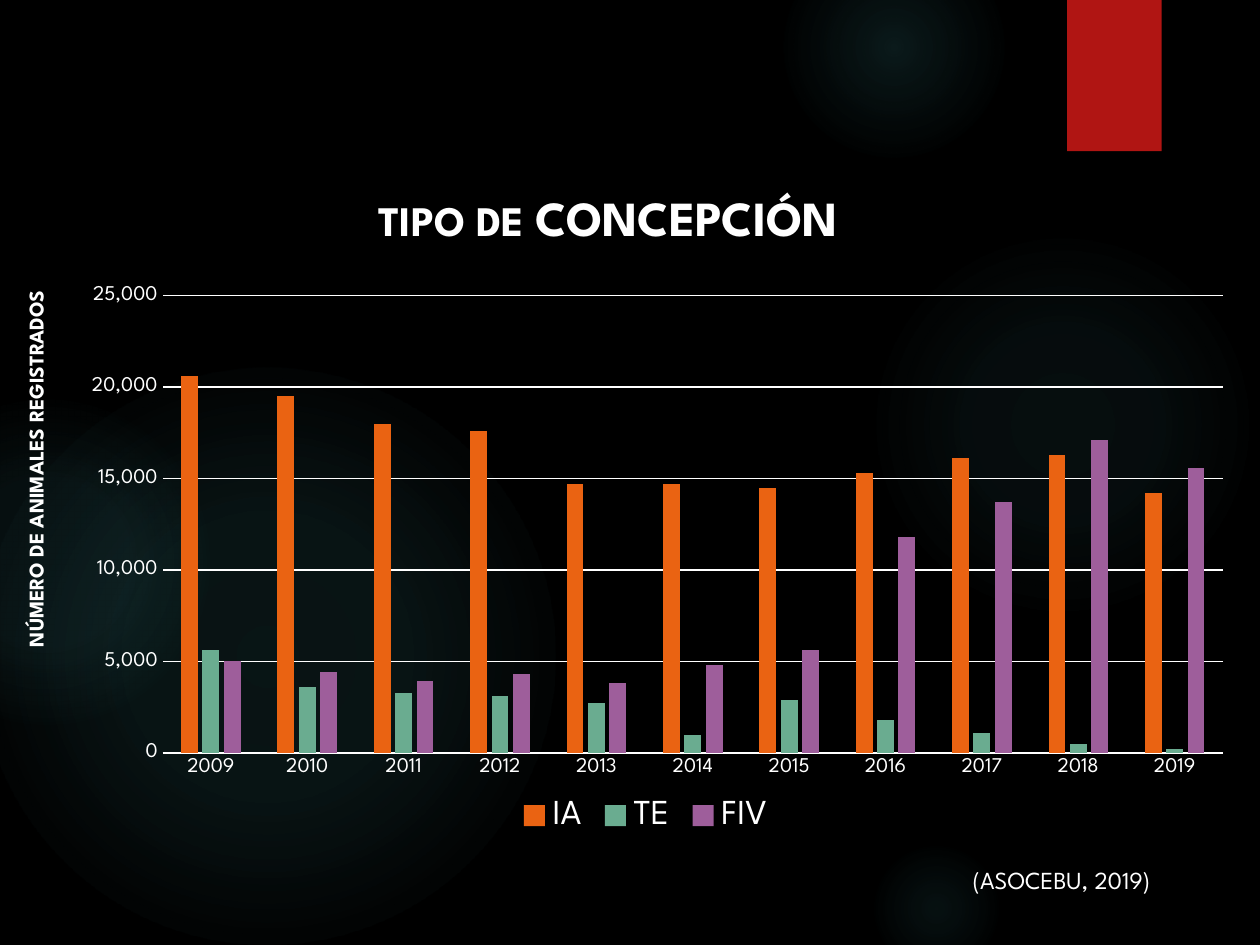
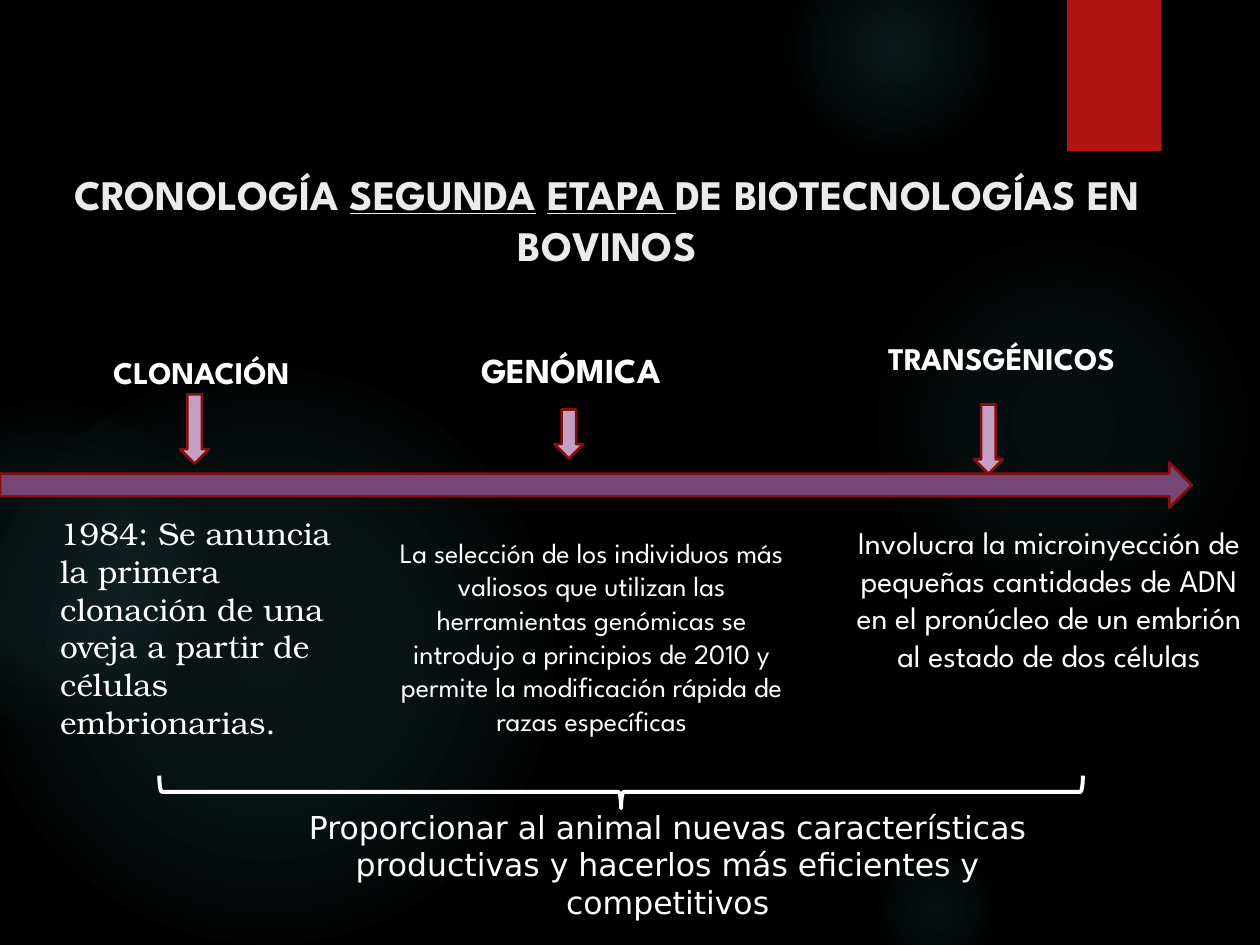
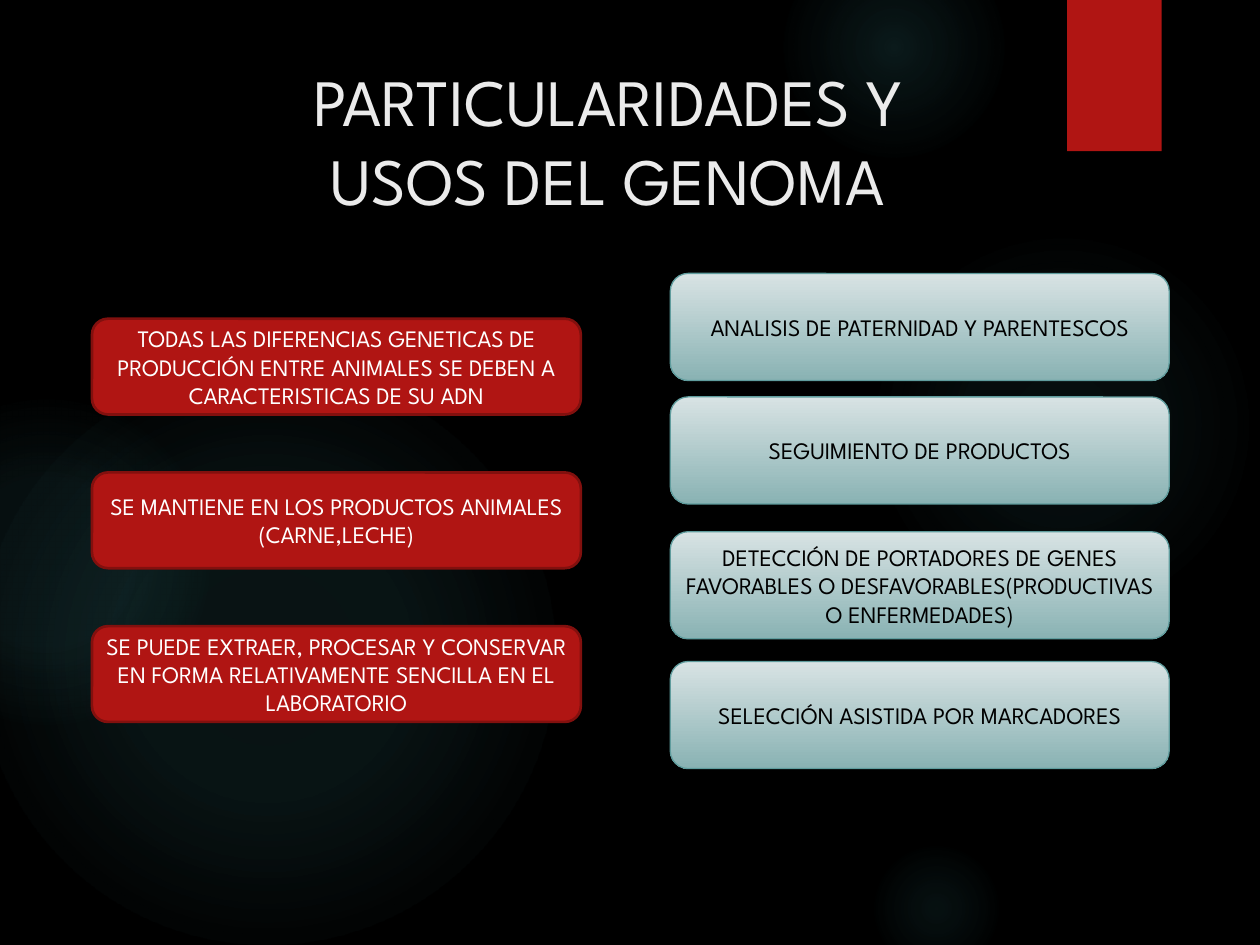
from dataclasses import dataclass

from pptx import Presentation
from pptx.chart.data import CategoryChartData as Data
from pptx.dml.color import RGBColor
from pptx.enum.chart import XL_CHART_TYPE as Kind, XL_LEGEND_POSITION as Spot, XL_TICK_MARK as Tick
from pptx.enum.shapes import MSO_SHAPE as Form
from pptx.enum.text import MSO_ANCHOR as Anchor, PP_ALIGN as Align
from pptx.oxml import parse_xml
from pptx.oxml.ns import nsdecls, qn
from pptx.util import Inches, Pt


@dataclass(frozen=True)
class Theme:
    """Colours, fonts and type sizes of the deck."""
    black: str = "000000"
    white: str = "FFFFFF"
    pale: str = "EBEBEB"
    glow: str = "50B9C1"
    red: str = "B01513"
    dark: str = "82100E"
    plum: str = "764674"
    lilac: str = "C59EC3"
    mist: str = "D8E3E4"
    teal: str = "89B2B3"
    edge: str = "5F9C9D"
    bars: tuple = ("EA6312", "6AAC90", "9E5E9B")
    font: str = "League Spartan"
    serif: str = "TeX Gyre Bonum"
    sans: str = "DejaVu Sans"
    least: float = 10
    tiny: float = 12
    card: float = 13.5
    small: float = 14
    note: float = 16
    body: float = 18
    big: float = 20
    head: float = 24
    main: float = 28
    huge: float = 37.8


T = Theme()
HALOS = (
    ((6.89, 1.83, 3.08), ((0, 7), (36, 6), (69, 0))),
    ((6.22, -0.5, 1.75), ((0, 14), (36, 7), (73, 0))),
    ((6.89, 6.67, 1.08), ((0, 9), (36, 5), (66, 0))),
    ((-0.17, 2.92, 4.58), ((0, 11), (36, 10), (75, 0))),
    ((-0.92, 3.17, 2.58), ((0, 8), (36, 8), (72, 0))),
)


def tint(code):
    """Turn a hex code into a colour."""
    return RGBColor.from_string(code)


def style(font, size=T.body, color=T.white, face=T.font, bold=False, under=False):
    """Format a font."""
    font.size, font.name, font.bold, font.underline = Pt(size), face, bold, under
    font.color.rgb = tint(color)


def write(frame, text, align=Align.LEFT, **look):
    """Fill a frame with a string or with (string, format) runs."""
    para = frame.paragraphs[0]
    para.alignment = align
    parts = [(text, {})] if isinstance(text, str) else text
    for words, extra in parts:
        run = para.add_run()
        run.text = words
        style(run.font, **{**look, **extra})


def label(slide, box, text, **look):
    """Add a wrapped text box and return its frame."""
    frame = slide.shapes.add_textbox(*map(Inches, box)).text_frame
    frame.word_wrap = True
    write(frame, text, **look)
    return frame


def shape(slide, form, box, fill=None, line=None, width=1.5):
    """Add a flat preset shape."""
    item = slide.shapes.add_shape(form, *map(Inches, box))
    item.shadow.inherit = False
    if fill:
        item.fill.solid()
        item.fill.fore_color.rgb = tint(fill)
    else:
        item.fill.background()
    if line:
        item.line.color.rgb = tint(line)
        item.line.width = Pt(width)
    else:
        item.line.fill.background()
    return item


def halo(slide, box, stops):
    """Add a round glow that fades outward."""
    left, top, size = box
    item = shape(slide, Form.OVAL, (left, top, size, size))
    marks = "".join(
        f'<a:gs pos="{pos * 1000}"><a:srgbClr val="{T.glow}">'
        f'<a:alpha val="{alpha * 1000}"/></a:srgbClr></a:gs>' for pos, alpha in stops)
    props = item._element.spPr
    props.replace(props.find(qn("a:noFill")), parse_xml(
        f'<a:gradFill {nsdecls("a")} rotWithShape="1"><a:gsLst>{marks}</a:gsLst>'
        '<a:path path="circle"><a:fillToRect l="50000" t="50000" r="50000" b="50000"/>'
        '</a:path></a:gradFill>'))


def start(deck):
    """Add a slide with the glows and the red tab."""
    slide = deck.slides.add_slide(deck.slide_layouts[6])
    for box, stops in HALOS:
        halo(slide, box, stops)
    shape(slide, Form.RECTANGLE, (8.47, 0, 0.75, 1.2), T.red)
    return slide


def layout(node, index, **spots):
    """Give a chart part a manual layout."""
    for old in node.findall(qn("c:layout")):
        node.remove(old)
    inner = '<c:layoutTarget val="inner"/>' if "w" in spots else ""
    modes = "".join(f'<c:{key}Mode val="edge"/>' for key in "xy")
    sizes = "".join(f'<c:{key} val="{val}"/>' for key, val in spots.items())
    node.insert(index, parse_xml(
        f'<c:layout {nsdecls("c")}><c:manualLayout>{inner}{modes}{sizes}'
        '</c:manualLayout></c:layout>'))


def axes(chart):
    """Format both axes and the grid."""
    for axis in (chart.category_axis, chart.value_axis):
        axis.major_tick_mark = axis.minor_tick_mark = Tick.NONE
        style(axis.tick_labels.font, size=T.tiny)
    base, scale = chart.category_axis, chart.value_axis
    scale.minimum_scale, scale.maximum_scale, scale.major_unit = 0, 25000, 5000
    scale.tick_labels.number_format = "#,##0"
    scale.tick_labels.number_format_is_linked = False
    scale.format.line.fill.background()
    for line in (base.format.line, scale.major_gridlines.format.line):
        line.color.rgb = tint(T.white)
        line.width = Pt(0.75)


def graph(slide, box, years, rows):
    """Add the column chart of animals by type of conception."""
    data = Data(number_format="#,##0")
    data.categories = years
    for name, vals in rows.items():
        data.add_series(name, vals)
    chart = slide.shapes.add_chart(Kind.COLUMN_CLUSTERED, *map(Inches, box), data).chart
    style(chart.font, size=T.least)
    write(chart.chart_title.text_frame,
          [("TIPO DE ", {"size": T.head}), ("CONCEPCIÓN", {})],
          align=Align.CENTER, size=T.main, bold=True)
    layout(chart.chart_title._element, 1, x=0.27, y=0.03)
    layout(chart._chartSpace.chart.plotArea, 0, x=0.09, y=0.18, w=0.9, h=0.69)
    axes(chart)
    plot = chart.plots[0]
    plot.gap_width, plot.overlap, plot.vary_by_categories = 219, -27, False
    for series, code in zip(plot.series, T.bars):
        series.format.fill.solid()
        series.format.fill.fore_color.rgb = tint(code)
    chart.has_legend = True
    chart.legend.position = Spot.BOTTOM
    chart.legend.include_in_layout = False
    style(chart.legend.font, size=T.big)


def births(deck):
    """Build the chart slide."""
    slide = start(deck)
    graph(slide, (0.45, 1.4, 9.35, 5.26), [str(year) for year in range(2009, 2020)], {
        "IA": (20600, 19500, 18000, 17600, 14700, 14700, 14500, 15300, 16100, 16300, 14200),
        "TE": (5600, 3600, 3300, 3100, 2700, 1000, 2900, 1800, 1100, 500, 200),
        "FIV": (5000, 4400, 3900, 4300, 3800, 4800, 5600, 11800, 13700, 17100, 15600),
    })
    label(slide, (7.22, 6.82, 2.01, 0.34), "(ASOCEBU, 2019)", align=Align.RIGHT, size=T.small)
    side = label(slide, (0.13, 1.96, 0.4, 3.52), "NÚMERO DE ANIMALES REGISTRADOS",
                 align=Align.CENTER, size=T.tiny, bold=True)
    side._txBody.bodyPr.set("vert", "vert270")


def stage(slide, name, spot, arrow, text, box, top_size=T.body, **look):
    """Add one stage: its name, its arrow and its account."""
    left, top, high = arrow
    label(slide, (*spot, 2.5, 0.4), name, size=top_size, bold=True)
    shape(slide, Form.DOWN_ARROW, (left, top, 0.23, high), T.lilac, T.dark)
    label(slide, box, text, **look)


def history(deck):
    """Build the timeline slide."""
    slide = start(deck)
    shape(slide, Form.RIGHT_ARROW, (0, 3.67, 9.46, 0.36), T.plum, T.dark)
    label(slide, (0.25, 1.29, 9.14, 1.53), [
        ("CRONOLOGÍA ", {}), ("SEGUNDA", {"under": True}), (" ", {}),
        ("ETAPA ", {"under": True}), ("DE BIOTECNOLOGÍAS EN BOVINOS", {}),
    ], align=Align.CENTER, size=T.head, color=T.pale, bold=True)
    stage(slide, "CLONACIÓN", (0.8, 2.75), (1.43, 3.13, 0.55),
          "1984: Se anuncia la primera clonación de una oveja a partir de células embrionarias.",
          (0.38, 4.03, 2.56, 1.31), face=T.serif)
    stage(slide, "GENÓMICA", (3.72, 2.72), (4.4, 3.25, 0.39),
          "La selección de los individuos más valiosos que utilizan las herramientas genómicas "
          "se introdujo a principios de 2010 y permite la modificación rápida de razas específicas",
          (3.05, 4.2, 3.29, 1.99), top_size=T.big, align=Align.CENTER, size=T.note)
    stage(slide, "TRANSGÉNICOS", (6.95, 2.64), (7.73, 3.21, 0.55),
          "Involucra la microinyección de pequeñas cantidades de ADN en el pronúcleo "
          "de un embrión al estado de dos células",
          (6.68, 4.1, 3.29, 1.92), align=Align.CENTER)
    brace = shape(slide, Form.LEFT_BRACE, (4.8, 2.62, 0.26, 7.33), line=T.white, width=2.25)
    brace.rotation = 270
    label(slide, (2, 6.36, 6.6, 1.01),
          "Proporcionar al animal nuevas características productivas "
          "y hacerlos más eficientes y competitivos", align=Align.CENTER, face=T.sans)


def card(slide, box, text, color, **paint):
    """Add a rounded card with centred text."""
    item = shape(slide, Form.ROUNDED_RECTANGLE, box, **paint)
    frame = item.text_frame
    frame.word_wrap, frame.vertical_anchor = True, Anchor.MIDDLE
    frame.margin_left = frame.margin_right = Inches(0.07)
    frame.margin_top = frame.margin_bottom = Inches(0.04)
    write(frame, text, align=Align.CENTER, size=T.card, color=color)
    return item


def traits(slide, left, top, texts):
    """Stack the red cards at an even step."""
    for row, text in enumerate(texts):
        card(slide, (left, top + 1.22 * row, 3.88, 0.76), text, T.white,
             fill=T.red, line=T.dark)


def uses(slide, left, items):
    """Stack the shaded cards at the tops given."""
    for top, text in items:
        fill = card(slide, (left, top, 3.96, 0.85), text, T.black,
                    line=T.edge, width=0.75).fill
        fill.gradient()
        fill.gradient_angle = 270
        for stop, code in zip(fill.gradient_stops, (T.mist, T.teal)):
            stop.color.rgb = tint(code)


def genome(deck):
    """Build the slide of genome traits and uses."""
    slide = start(deck)
    label(slide, (1.76, 0.43, 6.13, 0.53), "PARTICULARIDADES Y USOS DEL GENOMA",
          align=Align.CENTER, size=T.huge, color=T.pale)
    traits(slide, 0.73, 2.53, (
        "TODAS LAS DIFERENCIAS GENETICAS DE PRODUCCIÓN ENTRE ANIMALES "
        "SE DEBEN A CARACTERISTICAS DE SU ADN",
        "SE MANTIENE EN LOS PRODUCTOS ANIMALES (CARNE,LECHE)",
        "SE PUEDE EXTRAER, PROCESAR Y CONSERVAR EN FORMA RELATIVAMENTE SENCILLA "
        "EN EL LABORATORIO",
    ))
    uses(slide, 5.32, (
        (2.17, "ANALISIS DE PATERNIDAD Y PARENTESCOS"),
        (3.15, "SEGUIMIENTO DE PRODUCTOS"),
        (4.22, "DETECCIÓN DE PORTADORES DE GENES FAVORABLES "
               "O DESFAVORABLES(PRODUCTIVAS O ENFERMEDADES)"),
        (5.25, "SELECCIÓN ASISTIDA POR MARCADORES"),
    ))


def main():
    """Build and save the deck."""
    deck = Presentation()
    deck.slide_width, deck.slide_height = Inches(10), Inches(7.5)
    back = deck.slide_master.background.fill
    back.solid()
    back.fore_color.rgb = tint(T.black)
    for build in (births, history, genome):
        build(deck)
    deck.save("out.pptx")


if __name__ == "__main__":
    main()
